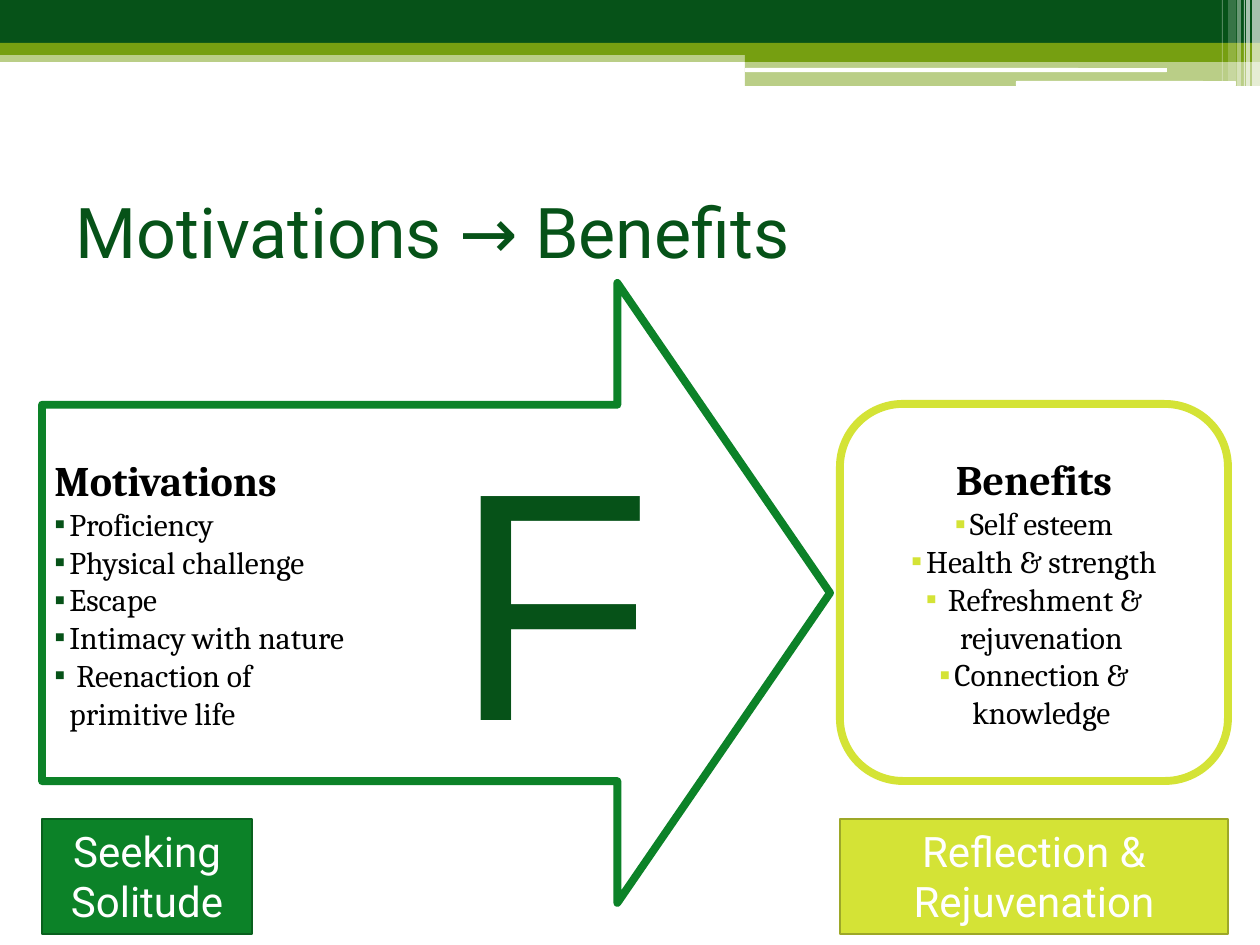
from lxml.etree import SubElement
from pptx import Presentation
from pptx.dml.color import RGBColor
from pptx.enum.shapes import MSO_SHAPE
from pptx.enum.text import MSO_ANCHOR, PP_ALIGN
from pptx.oxml.ns import qn
from pptx.util import Pt

# Content; every place is (left, top, width, height) in px
SLIDE_SIZE = (1260, 945)
EMU_PER_PX = 914400 / 126
DARK, OLIVE, GREEN, LIME = "065218", "769F11", "0C8228", "D4E336"
WHITE, BLACK = "FFFFFF", "000000"

# Place, colour, opacity in percent
HEADER_BANDS = [
    ((0, 50, 1260, 12), OLIVE, 50),
    ((0, 0, 1260, 43), DARK, 100),
    ((0, 43, 1260, 12), OLIVE, 100),
    ((745, 49, 515, 13), OLIVE, 100),
    ((745, 61, 515, 25), OLIVE, 50),
]
HEADER_BARS = [(745, 68, 422, 4), (1016, 81, 220, 5)]
# Left, width, height, opacity in percent
HEADER_STRIPES = [
    (1252, 8, 86, 65), (1246, 4, 86, 65), (1244, 1, 86, 60),
    (1237, 4, 86, 40), (1228, 8, 81, 20), (1222, 1, 81, 30),
]

TITLE = "Motivations → Benefits"
TITLE_PLACE = (63, 157, 1134, 148)
LETTER = "F"
LETTER_PLACE = (354, 387, 399, 407)
MOTIVATIONS = ("Motivations", [
    "Proficiency", "Physical challenge", "Escape", "Intimacy with nature",
    " Reenaction of primitive life",
])
MOTIVATIONS_PLACE = (42, 283, 788, 620)
BENEFITS = ("Benefits", [
    "Self esteem", "Health & strength", " Refreshment & rejuvenation",
    "Connection & knowledge",
])
BENEFITS_PLACE = (840, 404, 388, 377)
CAPTIONS = [
    ("Seeking Solitude", (42, 819, 210, 115), GREEN, "09601E"),
    ("Reflection & Rejuvenation", (840, 819, 388, 115), LIME, "9DA828"),
]
BULLET, INDENT = "▪", 15


def px(length):
    return round(length * EMU_PER_PX)


def rgb(colour):
    return RGBColor.from_string(colour)


def add_block(slide, kind, place, fill=None, opacity=100, line=None, weight=0):
    block = slide.shapes.add_shape(kind, *map(px, place))
    block.shadow.inherit = False
    if fill:
        block.fill.solid()
        block.fill.fore_color.rgb = rgb(fill)
        if opacity < 100:
            colour = block.fill._xPr.find(qn("a:solidFill"))[0]
            SubElement(colour, qn("a:alpha"), val=str(opacity * 1000))
    else:
        block.fill.background()
    if line:
        block.line.color.rgb = rgb(line)
        block.line.width = Pt(weight)
        SubElement(block.line._get_or_add_ln(), qn("a:round"))
    else:
        block.line.fill.background()
    return block


def write(paragraph, text, size, font, colour, align=PP_ALIGN.LEFT, bold=False):
    paragraph.text = text
    paragraph.alignment = align
    paragraph.font.size = Pt(size)
    paragraph.font.name = font
    paragraph.font.color.rgb = rgb(colour)
    paragraph.font.bold = bold


def hang(paragraph, bullet_colour=None):
    properties = paragraph._p.get_or_add_pPr()
    properties.set("marL", str(px(INDENT)))
    properties.set("indent", str(-px(INDENT)))
    if bullet_colour:
        # Bullet marks go before the default run properties
        colour = SubElement(properties, qn("a:buClr"))
        SubElement(colour, qn("a:srgbClr"), val=bullet_colour)
        SubElement(properties, qn("a:buFont"), typeface="Arial")
        SubElement(properties, qn("a:buChar"), char=BULLET)
        properties.append(properties.find(qn("a:defRPr")))


def write_list(frame, content, align, bullet_colour, hang_heading):
    heading, items = content
    frame.word_wrap = True
    frame.vertical_anchor = MSO_ANCHOR.MIDDLE
    write(frame.paragraphs[0], heading, 24, "Cambria", BLACK, align, True)
    if hang_heading:
        hang(frame.paragraphs[0])
    for item in items:
        paragraph = frame.add_paragraph()
        write(paragraph, item, 18, "Cambria", BLACK, align)
        hang(paragraph, bullet_colour)


def add_label(slide, place, *style):
    frame = slide.shapes.add_textbox(*map(px, place)).text_frame
    frame.word_wrap = True
    frame.vertical_anchor = MSO_ANCHOR.MIDDLE
    write(frame.paragraphs[0], *style)


def main():
    deck = Presentation()
    deck.slide_width, deck.slide_height = map(px, SLIDE_SIZE)
    slide = deck.slides.add_slide(deck.slide_layouts[6])

    # Header decoration
    for place, colour, opacity in HEADER_BANDS:
        add_block(slide, MSO_SHAPE.RECTANGLE, place, colour, opacity)
    for place in HEADER_BARS:
        add_block(slide, MSO_SHAPE.ROUNDED_RECTANGLE, place, WHITE)
    for left, width, height, opacity in HEADER_STRIPES:
        add_block(slide, MSO_SHAPE.RECTANGLE, (left, 0, width, height), WHITE, opacity)

    # Motivations arrow
    arrow = add_block(slide, MSO_SHAPE.RIGHT_ARROW, MOTIVATIONS_PLACE, WHITE,
                      line=GREEN, weight=4.5)
    arrow.adjustments[0], arrow.adjustments[1] = 0.607, 0.343
    arrow.text_frame.margin_right = px(328)
    write_list(arrow.text_frame, MOTIVATIONS, PP_ALIGN.LEFT, DARK, True)

    # Large letter and title
    add_label(slide, LETTER_PLACE, LETTER, 186, "Arial", DARK, PP_ALIGN.CENTER)
    add_label(slide, TITLE_PLACE, TITLE, 40, "Roboto", DARK)

    # Benefits box
    benefits = add_block(slide, MSO_SHAPE.ROUNDED_RECTANGLE, BENEFITS_PLACE,
                         line=LIME, weight=4.5)
    write_list(benefits.text_frame, BENEFITS, PP_ALIGN.CENTER, LIME, False)

    # Captions
    for text, place, fill, line in CAPTIONS:
        caption = add_block(slide, MSO_SHAPE.RECTANGLE, place, fill, line=line, weight=1.5)
        frame = caption.text_frame
        frame.word_wrap = True
        frame.vertical_anchor = MSO_ANCHOR.TOP
        write(frame.paragraphs[0], text, 24, "Roboto", WHITE, PP_ALIGN.CENTER)

    deck.save("out.pptx")


if __name__ == "__main__":
    main()
